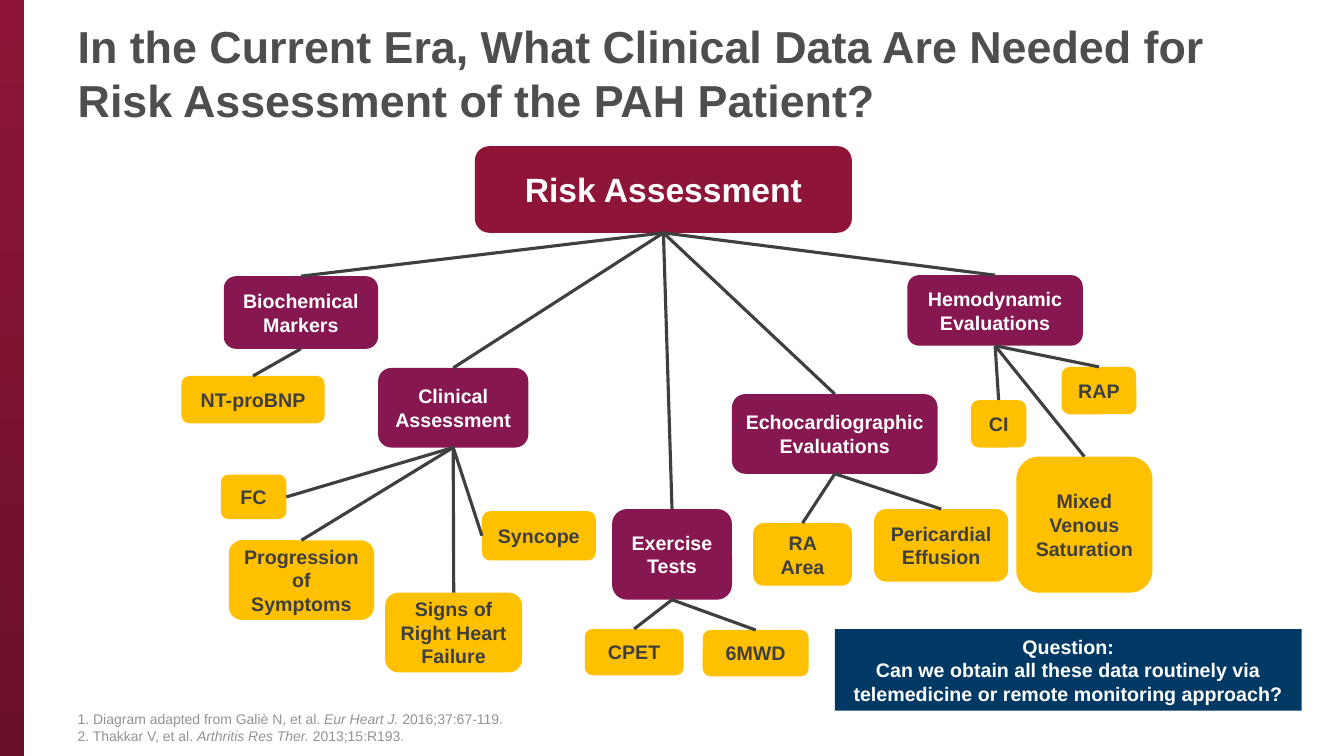
"""Build the PAH risk assessment tree slide."""
import dataclasses

import pptx
import pptx.dml.color
import pptx.enum.shapes
import pptx.enum.text
import pptx.oxml
import pptx.oxml.ns
import pptx.util

Inches = pptx.util.Inches
Shapes = pptx.enum.shapes.MSO_SHAPE
Align = pptx.enum.text.PP_ALIGN
Anchor = pptx.enum.text.MSO_ANCHOR
TOP, LEFT, BOTTOM, RIGHT = range(4)


@dataclasses.dataclass(frozen=True)
class Theme:
    """Colours, font and type sizes of the slide."""
    font: str = "Arial"
    crimson: str = "8E1537"
    dark_crimson: str = "6B1029"
    plum: str = "861751"
    gold: str = "FFC000"
    navy: str = "003A64"
    white: str = "FFFFFF"
    charcoal: str = "3F3F3F"
    title_grey: str = "4D4E4D"
    note_grey: str = "939393"
    title_size: int = 32
    root_size: int = 24
    body_size: int = 14
    note_size: int = 10
    line_width: float = 2.25


THEME = Theme()
TITLE = "In the Current Era, What Clinical Data Are Needed for Risk Assessment of the PAH Patient?"
ROOT = ("Risk Assessment", (4.71, 1.45, 3.74, 0.86))
BRANCHES = [
    ("Biochemical Markers", (2.22, 2.74, 1.53, 0.72), [
        ("NT-proBNP", (1.8, 3.73, 1.42, 0.47), TOP),
    ]),
    ("Clinical Assessment", (3.75, 3.65, 1.49, 0.79), [
        ("FC", (2.19, 4.71, 0.65, 0.44), RIGHT),
        ("Progression of Symptoms", (2.27, 5.36, 1.44, 0.79), TOP),
        ("Signs of Right Heart Failure", (3.82, 5.88, 1.36, 0.79), TOP),
        ("Syncope", (4.78, 5.07, 1.13, 0.49), LEFT),
    ]),
    ("Exercise Tests", (6.07, 5.05, 1.19, 0.9), [
        ("CPET", (5.8, 6.24, 0.98, 0.46), TOP),
        ("6MWD", (6.97, 6.25, 1.05, 0.46), TOP),
    ]),
    ("Echocardiographic Evaluations", (7.26, 3.91, 2.04, 0.79), [
        ("RA Area", (7.47, 5.19, 0.98, 0.62), TOP),
        ("Pericardial Effusion", (8.67, 5.05, 1.33, 0.72), TOP),
    ]),
    ("Hemodynamic Evaluations", (9, 2.73, 1.74, 0.7), [
        ("CI", (9.63, 3.97, 0.55, 0.47), TOP),
        ("RAP", (10.53, 3.64, 0.74, 0.47), TOP),
        ("Mixed Venous\nSaturation", (10.08, 4.53, 1.35, 1.35), TOP),
    ]),
]
QUESTION = ("Question:\nCan we obtain all these data routinely via "
            "telemedicine or remote monitoring approach?")
REFERENCES = [
    ("1. Diagram adapted from Galiè N, et al. ", "Eur Heart J. ", "2016;37:67-119."),
    ("2. Thakkar V, et al. ", "Arthritis Res Ther. ", "2013;15:R193."),
]


def rgb(value):
    """Turn a hex string into a colour."""
    return pptx.dml.color.RGBColor.from_string(value)


def apply(target, values):
    """Set each named attribute on the target."""
    for name, value in values.items():
        setattr(target, name, value)


def write(frame, lines, size, colour, bold=False, align=Align.LEFT, anchor=Anchor.MIDDLE):
    """Fill a frame with lines of spans, every second span italic."""
    apply(frame, {"word_wrap": True, "vertical_anchor": anchor,
                  "margin_left": Inches(0.09), "margin_right": Inches(0.09)})
    for index, spans in enumerate(lines):
        para = frame.paragraphs[0] if index == 0 else frame.add_paragraph()
        para.alignment = align
        for order, text in enumerate(spans):
            span = para.add_run()
            span.text = text
            apply(span.font, {"name": THEME.font, "size": pptx.util.Pt(size),
                              "bold": bold, "italic": order % 2 == 1})
            span.font.color.rgb = rgb(colour)


def add_text(page, area, lines, size, colour, **layout):
    """Add a plain text box."""
    box = page.shapes.add_textbox(*map(Inches, area))
    write(box.text_frame, lines, size, colour, **layout)


def add_box(page, text, area, fill, colour=THEME.white, size=THEME.body_size,
            kind=Shapes.ROUNDED_RECTANGLE):
    """Add a filled box with bold centred text."""
    box = page.shapes.add_shape(kind, *map(Inches, area))
    box.shadow.inherit = False
    box.fill.solid()
    box.fill.fore_color.rgb = rgb(fill)
    box.line.fill.background()
    lines = [[line] for line in text.split("\n")]
    write(box.text_frame, lines, size, colour, bold=True, align=Align.CENTER)
    return box


def add_link(page, parent, child, site=TOP):
    """Join the bottom of a parent box to a side of its child."""
    link = page.shapes.add_connector(pptx.enum.shapes.MSO_CONNECTOR.STRAIGHT, 0, 0, 0, 0)
    link.begin_connect(parent, BOTTOM)
    link.end_connect(child, site)
    link.line.width = pptx.util.Pt(THEME.line_width)
    link.line.color.rgb = rgb(THEME.charcoal)
    properties = link._element.spPr
    properties.append(pptx.oxml.parse_xml(
        "<a:effectLst %s/>" % pptx.oxml.ns.nsdecls("a")))


def add_side_bar(page):
    """Add the shaded bar along the left edge."""
    bar = page.shapes.add_shape(Shapes.RECTANGLE, 0, 0, Inches(0.24), Inches(7.5))
    bar.shadow.inherit = False
    bar.line.fill.background()
    bar.fill.gradient()
    bar.fill.gradient_angle = 270
    for stop, colour in zip(bar.fill.gradient_stops, (THEME.crimson, THEME.dark_crimson)):
        stop.color.rgb = rgb(colour)


def add_tree(page):
    """Add the root, its branches and their measures."""
    root = add_box(page, *ROOT, THEME.crimson, size=THEME.root_size)
    for name, area, measures in BRANCHES:
        branch = add_box(page, name, area, THEME.plum)
        add_link(page, root, branch)
        for label, place, site in measures:
            measure = add_box(page, label, place, THEME.gold, THEME.charcoal)
            add_link(page, branch, measure, site)


def main():
    """Build and save the deck."""
    deck = pptx.Presentation()
    apply(deck, {"slide_width": Inches(13.33), "slide_height": Inches(7.5)})
    page = deck.slides.add_slide(deck.slide_layouts[6])
    add_side_bar(page)
    add_text(page, (0.68, 0.07, 11.75, 1.3), [[TITLE]], THEME.title_size,
             THEME.title_grey, bold=True)
    add_text(page, (0.68, 6.95, 11.75, 0.48), REFERENCES, THEME.note_size,
             THEME.note_grey, anchor=Anchor.BOTTOM)
    add_tree(page)
    add_box(page, QUESTION, (8.28, 6.24, 4.63, 0.81), THEME.navy, kind=Shapes.RECTANGLE)
    deck.save("out.pptx")


if __name__ == "__main__":
    main()
